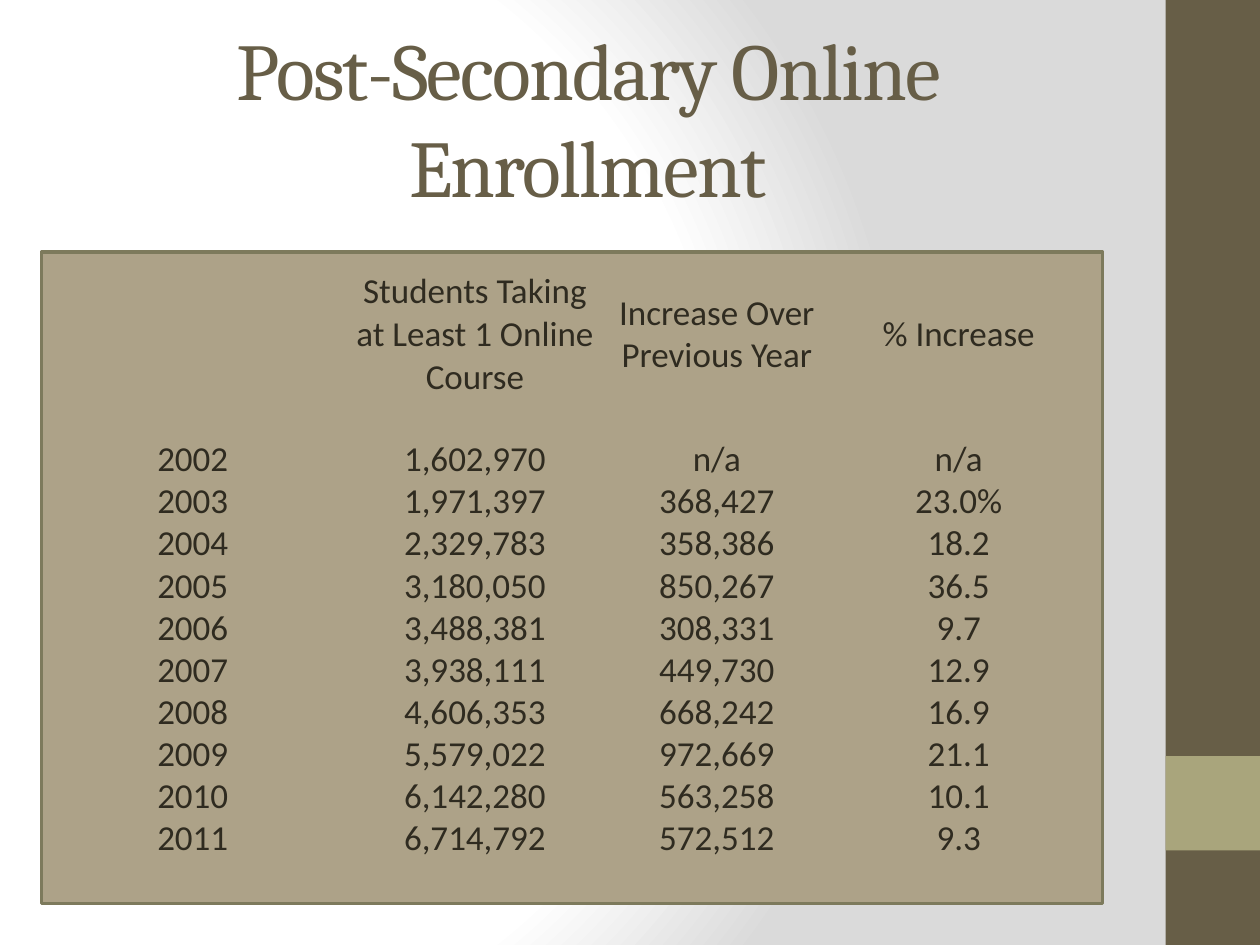
from pptx import Presentation
from pptx.dml.color import RGBColor
from pptx.enum import shapes, text
from pptx.oxml import parse_xml
from pptx.oxml.ns import qn
from pptx.util import Inches, Pt

TITLE = "Post-Secondary Online Enrollment"
HEAD = ("", "Students Taking at Least 1 Online Course",
        "Increase Over Previous Year", "% Increase")
DATA = [
    ("2002", "1,602,970", "n/a", "n/a"),
    ("2003", "1,971,397", "368,427", "23.0%"),
    ("2004", "2,329,783", "358,386", "18.2"),
    ("2005", "3,180,050", "850,267", "36.5"),
    ("2006", "3,488,381", "308,331", "9.7"),
    ("2007", "3,938,111", "449,730", "12.9"),
    ("2008", "4,606,353", "668,242", "16.9"),
    ("2009", "5,579,022", "972,669", "21.1"),
    ("2010", "6,142,280", "563,258", "10.1"),
    ("2011", "6,714,792", "572,512", "9.3"),
]
WIDTHS = [2.56, 1.92, 1.92, 1.92]
HEIGHTS = [1.65] + [0.33] * len(DATA)
BROWN, GREEN, TAN, EDGE, INK = "675E47", "A9A57C", "ADA288", "7D7A5C", "2F2B20"
STOPS = [(0, "FFFFFF"), (75, "FFFFFF"), (100, "DADADA")]
PLAIN = "{2D5ABB26-0587-4C30-8999-92F81FD0307C}"  # no style, no grid


def color(code):
    return RGBColor.from_string(code)


def shade(slide):
    """Give the slide a radial gradient background."""
    stops = "".join(f'<a:gs pos="{pos * 1000}"><a:srgbClr val="{code}"/></a:gs>'
                    for pos, code in STOPS)
    slide.element.cSld.insert(0, parse_xml(
        '<p:bg xmlns:p="http://schemas.openxmlformats.org/presentationml/2006/main"'
        ' xmlns:a="http://schemas.openxmlformats.org/drawingml/2006/main">'
        f'<p:bgPr><a:gradFill rotWithShape="1"><a:gsLst>{stops}</a:gsLst>'
        '<a:path path="circle"><a:fillToRect l="20000" t="50000" r="100000" b="50000"/>'
        '</a:path></a:gradFill><a:effectLst/></p:bgPr></p:bg>'))


def block(slide, box, fill, line=None):
    rect = slide.shapes.add_shape(shapes.MSO_SHAPE.RECTANGLE, *map(Inches, box))
    rect.shadow.inherit = False
    rect.fill.solid()
    rect.fill.fore_color.rgb = color(fill)
    if line:
        rect.line.color.rgb = color(line)
        rect.line.width = Pt(2)
    else:
        rect.line.fill.background()


def write(frame, words, size, font, code):
    """Put one centred paragraph in the frame and style its runs."""
    frame.text = words
    para = frame.paragraphs[0]
    para.alignment = text.PP_ALIGN.CENTER
    para.font.size = Pt(size)
    for run in para.runs:
        run.font.size = Pt(size)
        run.font.name = font
        run.font.color.rgb = color(code)


def add_title(slide):
    box = slide.shapes.add_textbox(*map(Inches, (0.5, 0.3, 8.33, 1.25)))
    frame = box.text_frame
    frame.word_wrap = True
    frame.vertical_anchor = text.MSO_ANCHOR.MIDDLE
    write(frame, TITLE, 46, "Cambria", BROWN)
    frame.paragraphs[0].runs[0].font._element.set("spc", "-100")


def add_grid(slide):
    rows = [HEAD] + DATA
    size = (0.25, 1.83, sum(WIDTHS), sum(HEIGHTS))
    table = slide.shapes.add_table(len(rows), len(HEAD), *map(Inches, size)).table
    table.first_row = table.horz_banding = False
    table._tbl.tblPr.find(qn("a:tableStyleId")).text = PLAIN
    for col, width in zip(table.columns, WIDTHS):
        col.width = Inches(width)
    for row, height, words in zip(table.rows, HEIGHTS, rows):
        row.height = Inches(height)
        for cell, word in zip(row.cells, words):
            cell.fill.background()
            cell.vertical_anchor = text.MSO_ANCHOR.MIDDLE
            cell.margin_left = cell.margin_right = 0
            cell.margin_top = cell.margin_bottom = 0
            write(cell.text_frame, word, 20, "Calibri", INK)


def main():
    deck = Presentation()
    deck.slide_width, deck.slide_height = Inches(10), Inches(7.5)
    slide = deck.slides.add_slide(deck.slide_layouts[6])
    shade(slide)
    block(slide, (9.25, 0, 0.75, 7.5), BROWN)
    block(slide, (9.25, 6, 0.75, 0.75), GREEN)
    block(slide, (0.33, 2, 8.42, 5.17), TAN, EDGE)
    add_title(slide)
    add_grid(slide)
    deck.save("out.pptx")


if __name__ == "__main__":
    main()
